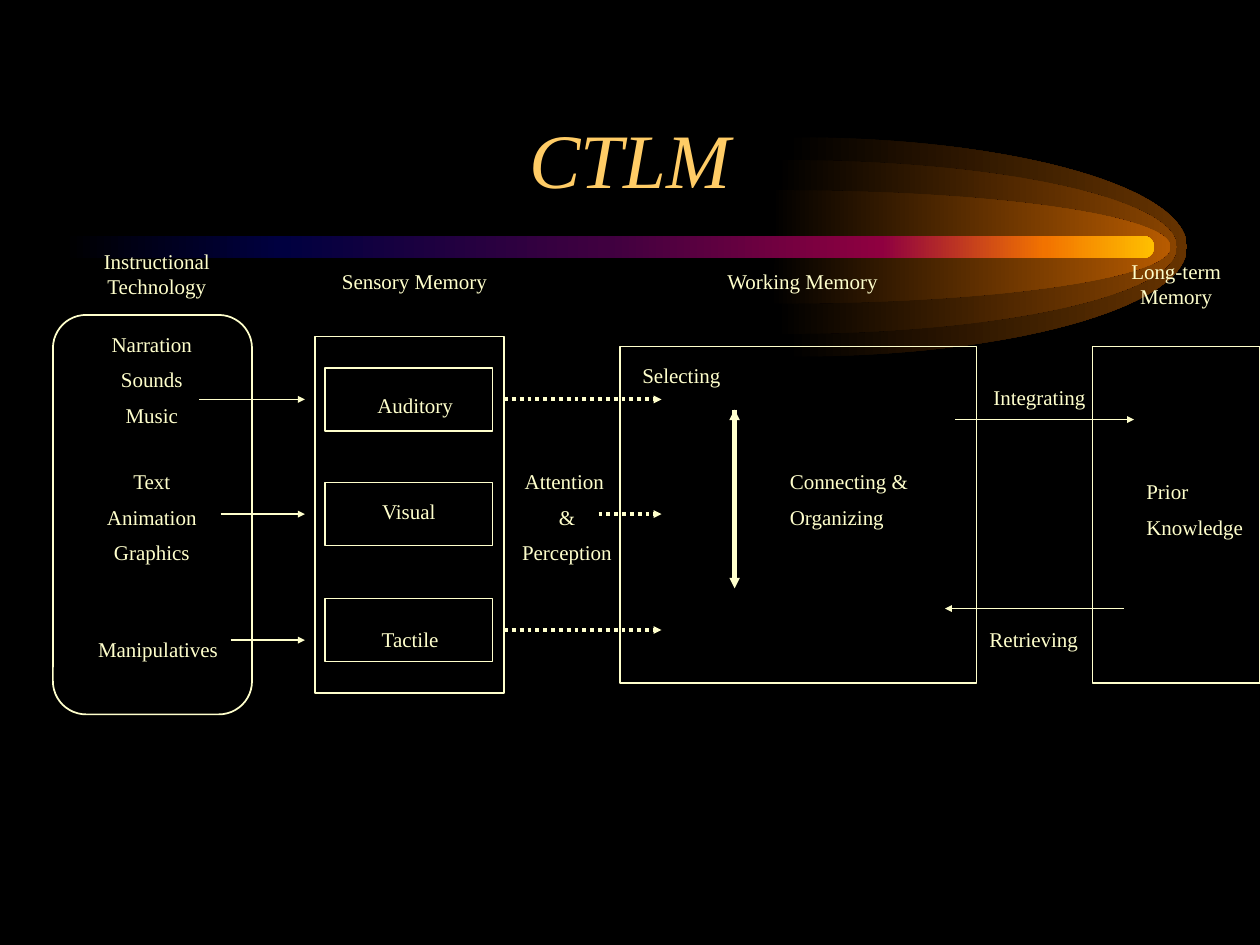
from lxml.etree import SubElement
from pptx import Presentation
from pptx.dml.color import RGBColor
from pptx.enum.dml import MSO_LINE
from pptx.enum.shapes import MSO_CONNECTOR, MSO_SHAPE
from pptx.enum.text import MSO_ANCHOR, MSO_AUTO_SIZE, PP_ALIGN
from pptx.oxml.ns import qn
from pptx.util import Inches, Pt

THEME = {
    "font": "Times New Roman",
    "background": "000000",
    "title": "FFCC66",
    "ink": "FFFFCC",
    "title_size": 44,
    "body_size": 12,
    "paragraph_gap": 6,
}

# Comet: right-hand half ellipses (centre x, half height, tip colour) and tail
COMET_Y, FLAME_LENGTH, FLAME_NOTCH = 1.96, 3.13, 0.05
CURVE = 0.55  # control-point distance for a quarter ellipse
FLAMES = [(6.29, 0.87, "663300"), (6.21, 0.69, "894400"), (6.16, 0.45, "B75B00")]
TAIL_BOX = (0.5, 1.87, 8.66, 0.18)
TAIL_STOPS = [(0, "000000"), (20, "000040"), (50, "400040"),
              (75, "8F0040"), (90, "F27300"), (100, "FFBF00")]

TITLE = ("CTLM", (0.75, 0.42, 8.5, 1.25))

# Boxes: left, top, width, height
TECHNOLOGY_BOX = (0.42, 2.5, 1.58, 3.17)
MEMORY_BOXES = [(2.5, 2.67, 1.5, 2.83), (4.92, 2.75, 2.83, 2.67),
                (8.67, 2.75, 1.33, 2.67)]
CHANNEL_BOXES = [(2.58, top, 1.33, 0.5) for top in (2.92, 3.83, 4.75)]

CENTRED_LABELS = [
    (["Attention ", "&", "Perception"], (4, 3.67, 1, 0.9)),
    (["Auditory"], (2.67, 3.07, 1.25, 0.3)),
    (["Visual"], (2.58, 3.91, 1.33, 0.3)),
    (["Tactile"], (2.67, 4.92, 1.17, 0.3)),
    (["Narration", "Sounds", "Music"], (0.58, 2.58, 1.25, 0.9)),
    (["Text", "Animation", "Graphics"], (0.58, 3.67, 1.25, 0.9)),
    (["Manipulatives"], (0.67, 5, 1.17, 0.3)),
    (["Integrating"], (7.5, 3, 1.5, 0.3)),
    (["Retrieving"], (7.58, 4.92, 1.25, 0.3)),
    (["Instructional Technology"], (0.33, 1.92, 1.83, 0.5)),
    (["Sensory Memory"], (2.5, 2.08, 1.58, 0.3)),
    (["Working Memory"], (5.08, 2.08, 2.58, 0.3)),
    (["Long-term Memory"], (8.67, 2, 1.33, 0.5)),
]
LEFT_LABELS = [
    (["Connecting &", "Organizing"], (6.17, 3.67, 1.42, 0.6)),
    (["Selecting"], (5, 2.83, 1.5, 0.3)),
    (["Prior", "Knowledge"], (9, 3.75, 1, 0.6)),
]

# Arrows: start x, start y, end x, end y
INPUT_ARROWS = [(x, y, 2.42, y) for x, y in [(1.58, 3.17), (1.75, 4.08), (1.83, 5.08)]]
ATTENTION_ARROWS = [(x, y, 5.25, y) for x, y in [(4, 3.17), (4.75, 4.08), (4, 5)]]
CONNECTING_ARROWS = [(5.83, 3.25, 5.83, 4.67), (5.83, 4.58, 5.83, 3.25)]
EXCHANGE_ARROWS = [(7.58, 3.33, 9, 3.33), (8.92, 4.83, 7.5, 4.83)]


def color(name):
    return RGBColor.from_string(THEME.get(name, name))


def inches(values):
    return [Inches(value) for value in values]


def write_text(frame, lines, size=THEME["body_size"], ink="ink",
               align=PP_ALIGN.CENTER, italic=False, anchor=MSO_ANCHOR.TOP):
    frame.word_wrap = True
    frame.vertical_anchor = anchor
    for index, line in enumerate(lines):
        paragraph = frame.paragraphs[0] if index == 0 else frame.add_paragraph()
        paragraph.alignment = align
        paragraph.space_before = Pt(THEME["paragraph_gap"] if index else 0)
        run = paragraph.add_run()
        run.text = line
        run.font.name = THEME["font"]
        run.font.size = Pt(size)
        run.font.italic = italic
        run.font.color.rgb = color(ink)


def add_label(slide, lines, box, **text_format):
    shape = slide.shapes.add_textbox(*inches(box))
    write_text(shape.text_frame, lines, **text_format)
    shape.text_frame.auto_size = MSO_AUTO_SIZE.SHAPE_TO_FIT_TEXT


def add_box(slide, box, kind=MSO_SHAPE.RECTANGLE):
    shape = slide.shapes.add_shape(kind, *inches(box))
    shape.shadow.inherit = False
    shape.fill.background()
    shape.line.color.rgb = color("ink")
    shape.line.width = Pt(1)


def add_arrow(slide, ends, width=1, dash=None):
    arrow = slide.shapes.add_connector(MSO_CONNECTOR.STRAIGHT, *inches(ends))
    arrow.line.color.rgb = color("ink")
    arrow.line.width = Pt(width)
    if dash is not None:
        arrow.line.dash_style = dash
    properties = arrow._element.spPr
    SubElement(properties.find(qn("a:ln")), qn("a:tailEnd"),
               type="triangle", w="sm", len="sm")
    SubElement(properties, qn("a:effectLst"))


def paint_gradient(shape, stops):
    """Fill without outline, from left to right; stops are (percent, colour)."""
    shape.shadow.inherit = False
    shape.line.fill.background()
    shape.fill.gradient()
    shape.fill.gradient_angle = 0
    stop_list = shape._element.spPr.find(qn("a:gradFill")).find(qn("a:gsLst"))
    for stop in list(stop_list):
        stop_list.remove(stop)
    for percent, value in stops:
        stop = SubElement(stop_list, qn("a:gs"), pos=str(percent * 1000))
        SubElement(stop, qn("a:srgbClr"), val=value)


def add_flame(slide, center_x, half_height, tip):
    """Draw the outline with straight edges, then bend the first two into curves."""
    top, bottom = COMET_Y - half_height, COMET_Y + half_height
    right, left = center_x + FLAME_LENGTH, center_x - FLAME_NOTCH
    corners = [(center_x, top), (right, COMET_Y), (center_x, bottom),
               (left, bottom), (center_x, COMET_Y)]
    builder = slide.shapes.build_freeform(*inches(corners[0]), scale=1.0)
    builder.add_line_segments([inches(corner) for corner in corners[1:]], close=True)
    shape = builder.convert_to_shape()

    reach_x, reach_y = FLAME_LENGTH * CURVE, half_height * CURVE
    quarters = [
        [(center_x + reach_x, top), (right, COMET_Y - reach_y), corners[1]],
        [(right, COMET_Y + reach_y), (center_x + reach_x, bottom), corners[2]],
    ]
    path = next(shape._element.iter(qn("a:path")))
    for edge, points in zip(path.findall(qn("a:lnTo")), quarters):
        curve = SubElement(path, qn("a:cubicBezTo"))
        for x, y in points:
            SubElement(curve, qn("a:pt"), x=str(Inches(x) - shape.left),
                       y=str(Inches(y) - shape.top))
        path.replace(edge, curve)
    paint_gradient(shape, [(0, THEME["background"]), (100, tip)])


def add_comet(slide):
    for flame in FLAMES:
        add_flame(slide, *flame)
    tail = slide.shapes.add_shape(MSO_SHAPE.ROUNDED_RECTANGLE, *inches(TAIL_BOX))
    tail.adjustments[0] = 0.5
    paint_gradient(tail, TAIL_STOPS)


def add_title(slide):
    text, box = TITLE
    title = slide.shapes.title
    title.left, title.top, title.width, title.height = inches(box)
    write_text(title.text_frame, [text], size=THEME["title_size"], ink="title",
               italic=True, anchor=MSO_ANCHOR.BOTTOM)


def main():
    presentation = Presentation()
    presentation.slide_width, presentation.slide_height = Inches(10), Inches(7.5)
    slide = presentation.slides.add_slide(presentation.slide_layouts[5])
    slide.background.fill.solid()
    slide.background.fill.fore_color.rgb = color("background")

    add_comet(slide)
    add_title(slide)
    add_box(slide, TECHNOLOGY_BOX, MSO_SHAPE.FLOWCHART_ALTERNATE_PROCESS)
    for box in MEMORY_BOXES + CHANNEL_BOXES:
        add_box(slide, box)
    for ends in CONNECTING_ARROWS:
        add_arrow(slide, ends, width=3)
    for ends in ATTENTION_ARROWS:
        add_arrow(slide, ends, width=2.25, dash=MSO_LINE.ROUND_DOT)
    for ends in INPUT_ARROWS + EXCHANGE_ARROWS:
        add_arrow(slide, ends)
    for lines, box in LEFT_LABELS:
        add_label(slide, lines, box, align=PP_ALIGN.LEFT)
    for lines, box in CENTRED_LABELS:
        add_label(slide, lines, box)

    presentation.save("out.pptx")


if __name__ == "__main__":
    main()
